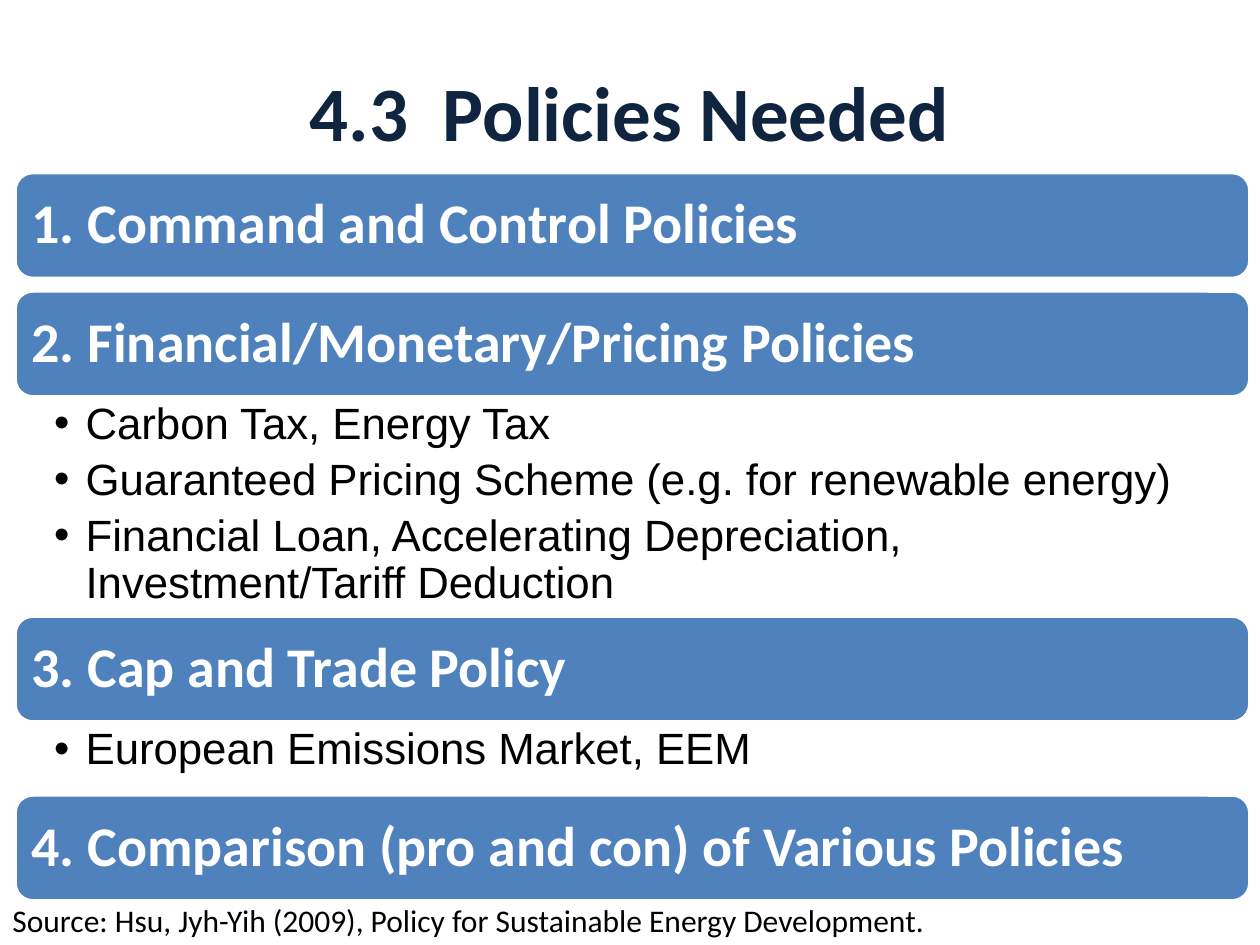
from lxml import etree
from pptx import Presentation
from pptx.dml.color import RGBColor
from pptx.enum import shapes, text
from pptx.oxml.ns import qn
from pptx.util import Inches, Pt

TITLE = "4.3  Policies Needed"
SOURCE = "Source: Hsu, Jyh-Yih (2009), Policy for Sustainable Energy Development."
# heading, details, height of the details
POLICIES = [
    ("1. Command and Control Policies", [], 0),
    ("2. Financial/Monetary/Pricing Policies", [
        "Carbon Tax, Energy Tax",
        "Guaranteed Pricing Scheme (e.g. for renewable energy)",
        "Financial Loan, Accelerating Depreciation, Investment/Tariff Deduction",
    ], 1.74),
    ("3. Cap and Trade Policy", ["European Emissions Market, EEM"], 0.58),
    ("4. Comparison (pro and con) of Various Policies", [], 0),
]
COLORS = {"title": "0F243E", "bar": "4F81BD", "white": "FFFFFF",
          "black": "000000"}
LEFT, TOP, WIDTH, BAR, GAP = 0.12, 1.37, 9.8, 0.84, 0.1


def color(name):
    return RGBColor.from_string(COLORS[name])


def write(shape, lines, size, ink, font="Calibri", bold=False,
          align=text.PP_ALIGN.LEFT, anchor=text.MSO_ANCHOR.MIDDLE,
          inset=(0.1, 0.05, 0.1, 0.05), space=1.0, bullet=False):
    """Fill a shape with one paragraph per line and format its runs."""
    frame = shape.text_frame
    frame.word_wrap = True
    frame.auto_size = text.MSO_AUTO_SIZE.NONE
    frame.vertical_anchor = anchor
    (frame.margin_left, frame.margin_top,
     frame.margin_right, frame.margin_bottom) = map(Inches, inset)
    frame.text = "\n".join(lines)
    for i, para in enumerate(frame.paragraphs):
        if bullet:
            add_bullet(para)
            if i:
                para.space_before = Pt(5)
        para.alignment = align
        para.line_spacing = space
        for run in para.runs:
            run.font.size = Pt(size)
            run.font.name = font
            run.font.bold = bold
            run.font.color.rgb = color(ink)


def add_bullet(para):
    props = para._p.get_or_add_pPr()
    props.set("marL", str(Inches(0.25)))
    props.set("indent", str(-Inches(0.25)))
    etree.SubElement(props, qn("a:buFont")).set("typeface", "Arial")
    etree.SubElement(props, qn("a:buChar")).set("char", "•")


def add_box(slide, left, top, width, height):
    return slide.shapes.add_textbox(*map(Inches, (left, top, width, height)))


def add_bar(slide, top, label):
    bar = slide.shapes.add_shape(
        shapes.MSO_SHAPE.ROUNDED_RECTANGLE,
        *map(Inches, (LEFT, top, WIDTH, BAR)))
    bar.shadow.inherit = False
    bar.fill.solid()
    bar.fill.fore_color.rgb = color("bar")
    bar.line.color.rgb = color("white")
    bar.line.width = Pt(2)
    write(bar, [label], 32, "white", bold=True, space=0.9,
          inset=(0.09, 0.09, 0.09, 0.09))


def main():
    deck = Presentation()
    deck.slide_width, deck.slide_height = Inches(10), Inches(7.5)
    slide = deck.slides.add_slide(deck.slide_layouts[5])

    title = slide.shapes.title
    title.left, title.top, title.width, title.height = map(
        Inches, (0.5, 0.3, 9, 1.25))
    write(title, [TITLE], 44, "title", bold=True, space=0.9,
          align=text.PP_ALIGN.CENTER)

    top = TOP
    for label, details, height in POLICIES:
        add_bar(slide, top, label)
        top += BAR
        if details:
            box = add_box(slide, LEFT, top, WIDTH, height)
            write(box, details, 25, "black", font="Arial", space=0.9,
                  anchor=text.MSO_ANCHOR.TOP, bullet=True,
                  inset=(0.31, 0.04, 0.25, 0.04))
        top += height or GAP

    write(add_box(slide, 0, 7.1, 8.78, 0.4), [SOURCE], 18, "black",
          anchor=text.MSO_ANCHOR.TOP)
    deck.save("out.pptx")


if __name__ == "__main__":
    main()
